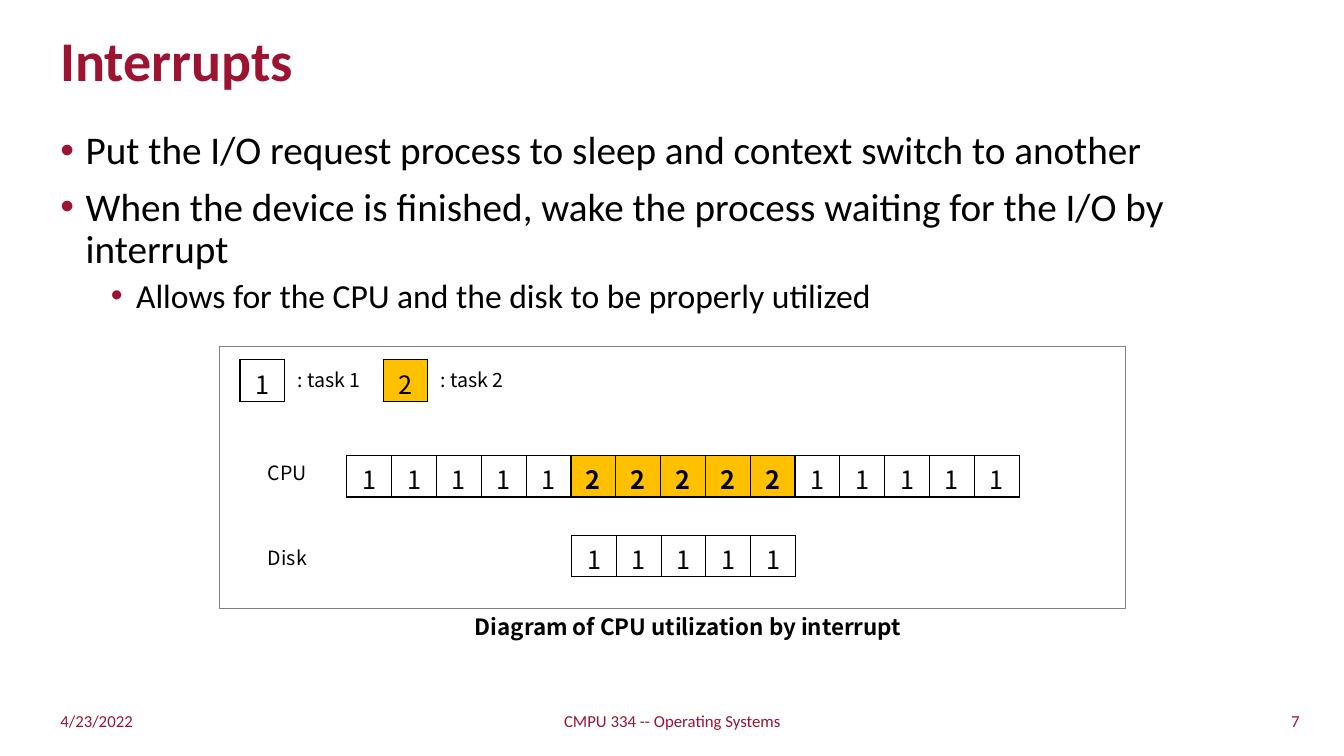
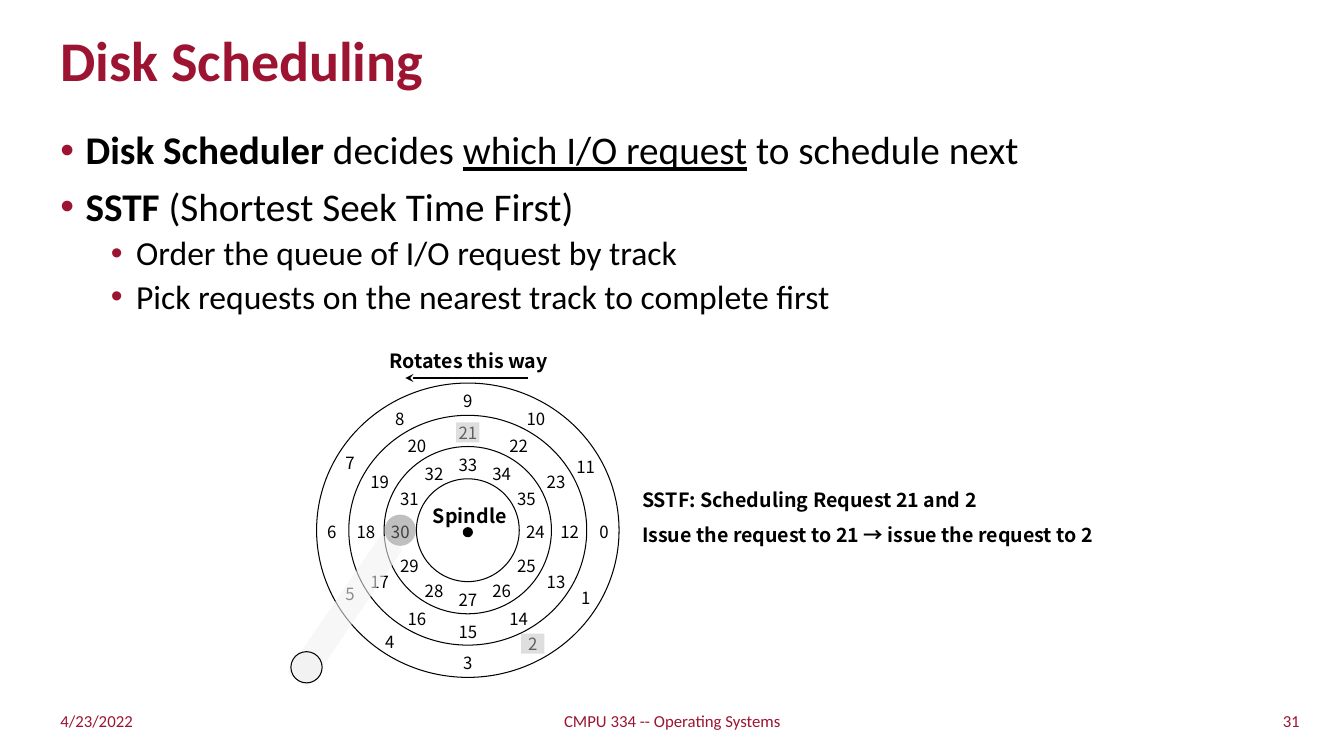
from dataclasses import dataclass
from math import cos, radians, sin

from lxml import etree
from pptx import Presentation
from pptx.dml.color import RGBColor
from pptx.enum.shapes import MSO_CONNECTOR, MSO_SHAPE
from pptx.enum.text import MSO_ANCHOR, MSO_AUTO_SIZE, PP_ALIGN
from pptx.oxml.ns import qn
from pptx.util import Inches, Pt

LEFT, CENTER, RIGHT = PP_ALIGN.LEFT, PP_ALIGN.CENTER, PP_ALIGN.RIGHT
TOP, MIDDLE = MSO_ANCHOR.TOP, MSO_ANCHOR.MIDDLE
NO_AUTOFIT = MSO_AUTO_SIZE.NONE
OVAL, RECT, ROUNDED = MSO_SHAPE.OVAL, MSO_SHAPE.RECTANGLE, MSO_SHAPE.ROUNDED_RECTANGLE
STRAIGHT = MSO_CONNECTOR.STRAIGHT


@dataclass(frozen=True)
class Theme:
    accent: str = "9C1431"
    ink: str = "000000"
    task_two: str = "FFC000"
    frame: str = "808080"
    arm: str = "F2F2F2"
    highlight: str = "BFBFBF"
    font: str = "Calibri"
    diagram_font: str = "Noto Sans CJK KR"
    title: int = 40
    body: tuple = (28, 24)
    cell: int = 18
    caption: int = 16
    label: int = 14
    small: int = 12


THEME = Theme()
DATE = "4/23/2022"
COURSE = "CMPU 334 -- Operating Systems"
BOLD = {"bold": True}
UNDERLINED = {"underline": True}

# Horizontal and vertical radii, from the spindle outwards
TRACK_EDGES = [(0.51, 0.51), (0.83, 0.83), (1.18, 1.14), (1.5, 1.46)]
# First sector and the radii on which a track's numbers sit
TRACKS = [(0, 1.35, 1.3), (12, 1.01, 0.99), (24, 0.67, 0.67)]
SECTORS_PER_TRACK = 12
SECTOR_NUDGES = {2: (-0.03, -0.02), 4: (-0.1, -0.04), 5: (0, -0.04), 7: (0, -0.04)}
REQUESTED = (21, 2)


def inches(box):
    return [Inches(length) for length in box]


def around(x, y, width, height):
    """Box of the given size centred on a point."""
    return x - width / 2, y - height / 2, width, height


def style_font(font, size, color=THEME.ink, name=THEME.diagram_font, bold=False):
    font.size, font.name, font.bold = Pt(size), name, bold
    font.color.rgb = RGBColor.from_string(color)


def add_label(slide, box, lines, size=THEME.label, color=THEME.ink,
              name=THEME.diagram_font, bold=False, align=LEFT, anchor=TOP,
              side_inset=0.1, spacing=1.0):
    frame = slide.shapes.add_textbox(*inches(box)).text_frame
    frame.word_wrap = True
    frame.vertical_anchor = anchor
    frame.margin_left = frame.margin_right = Inches(side_inset)
    frame.text = lines
    for paragraph in frame.paragraphs:
        paragraph.alignment, paragraph.line_spacing = align, spacing
        style_font(paragraph.font, size, color, name, bold)


def add_figure(slide, kind, box, fill=None, line=None, opacity=None):
    figure = slide.shapes.add_shape(kind, *inches(box))
    figure.shadow.inherit = False
    if fill:
        figure.fill.solid()
        figure.fill.fore_color.rgb = RGBColor.from_string(fill)
    else:
        figure.fill.background()
    if opacity:
        color = figure.element.spPr.find(qn("a:solidFill")).find(qn("a:srgbClr"))
        etree.SubElement(color, qn("a:alpha"), val=str(opacity * 1000))
    if line:
        figure.line.color.rgb = RGBColor.from_string(line)
        figure.line.width = Pt(0.75)
    else:
        figure.line.fill.background()
    return figure


def add_arrow(slide, x1, y1, x2, y2):
    arrow = slide.shapes.add_connector(STRAIGHT, *inches((x1, y1, x2, y2)))
    arrow.line.color.rgb = RGBColor.from_string(THEME.ink)
    arrow.line.width = Pt(1.5)
    etree.SubElement(arrow.line._get_or_add_ln(), qn("a:tailEnd"), type="stealth")
    etree.SubElement(arrow.element.spPr, qn("a:effectLst"))


def add_borders(cell):
    properties = cell._tc.get_or_add_tcPr()
    for position, side in enumerate(("a:lnL", "a:lnR", "a:lnT", "a:lnB")):
        border = etree.Element(qn(side), w=str(Pt(1)))
        fill = etree.SubElement(border, qn("a:solidFill"))
        etree.SubElement(fill, qn("a:srgbClr"), val=THEME.ink)
        properties.insert(position, border)


def add_timeline(slide, box, tasks, bottom_inset=0.0, emphasis=False):
    """One table row with a cell for each time slot."""
    table = slide.shapes.add_table(1, len(tasks), *inches(box)).table
    table.first_row = table.horz_banding = False
    for column, task, cell in zip(table.columns, tasks, table.iter_cells()):
        column.width = Inches(box[2] / len(tasks))
        is_second = task == "2"
        if is_second:
            cell.fill.solid()
            cell.fill.fore_color.rgb = RGBColor.from_string(THEME.task_two)
        else:
            cell.fill.background()
        add_borders(cell)
        cell.margin_bottom = Inches(bottom_inset)
        cell.text = task
        paragraph = cell.text_frame.paragraphs[0]
        paragraph.alignment = CENTER
        style_font(paragraph.font, THEME.cell, bold=emphasis and is_second)


def add_bullet(paragraph, level):
    properties = paragraph._p.get_or_add_pPr()
    properties.set("marL", str(Inches(0.25 + 0.5 * level)))
    properties.set("indent", str(Inches(-0.25)))
    color = etree.SubElement(properties, qn("a:buClr"))
    etree.SubElement(color, qn("a:srgbClr"), val=THEME.accent)
    etree.SubElement(properties, qn("a:buFont"), typeface="Arial")
    etree.SubElement(properties, qn("a:buChar"), char="•")


def fill_title(placeholder, title):
    frame = placeholder.text_frame
    frame.text = title
    frame.auto_size, frame.vertical_anchor = NO_AUTOFIT, MIDDLE
    paragraph = frame.paragraphs[0]
    paragraph.alignment, paragraph.line_spacing = LEFT, 0.9
    style_font(paragraph.font, THEME.title, THEME.accent, THEME.font, True)


def fill_body(placeholder, points):
    """Each point is its level and a list of (text, font settings) runs."""
    frame = placeholder.text_frame
    frame.auto_size = NO_AUTOFIT
    for number, (level, runs) in enumerate(points):
        paragraph = frame.add_paragraph() if number else frame.paragraphs[0]
        paragraph.level = level
        paragraph.line_spacing = 0.9
        paragraph.space_before = Pt((10, 5)[level] if number else 0)
        add_bullet(paragraph, level)
        style_font(paragraph.font, THEME.body[level], name=THEME.font)
        for text, settings in runs:
            run = paragraph.add_run()
            run.text = text
            for setting, value in settings.items():
                setattr(run.font, setting, value)


def add_footer(slide, number):
    for left, width, text, align in ((0.5, 3.76, DATE, LEFT),
                                     (4.42, 4.5, COURSE, CENTER),
                                     (9.23, 3.76, str(number), RIGHT)):
        add_label(slide, (left, 6.95, width, 0.4), text, THEME.small,
                  THEME.accent, THEME.font, align=align, anchor=MIDDLE)


def place_layout_parts(layout):
    """Move the title and body placeholders that every slide inherits."""
    boxes = {0: (0.5, 0.25, 11.45, 0.75), 1: (0.5, 1.25, 12.33, 5.45)}
    for placeholder in layout.placeholders:
        box = boxes.get(placeholder.placeholder_format.idx)
        if box:
            (placeholder.left, placeholder.top,
             placeholder.width, placeholder.height) = inches(box)


def add_content_slide(deck, number, title, points):
    slide = deck.slides.add_slide(deck.slide_layouts[1])
    fill_title(slide.shapes.title, title)
    fill_body(slide.placeholders[1], points)
    add_footer(slide, number)
    return slide


def add_utilization_diagram(slide, box):
    left, top, width, height = box
    add_figure(slide, RECT, box, line=THEME.frame)
    for task, offset in (("1", 0.2), ("2", 1.62)):
        add_timeline(slide, (left + offset, top + 0.13, 0.44, 0.41), task)
        add_label(slide, (left + offset + 0.47, top + 0.16, 1, 0.34), f": task {task}")
    add_label(slide, (left + 0.38, top + 1.08, 0.8, 0.34), "CPU")
    add_label(slide, (left + 0.38, top + 1.93, 0.8, 0.34), "Disk")
    add_timeline(slide, (left + 1.26, top + 1.08, 6.67, 0.41),
                 "111112222211111", bottom_inset=0.05, emphasis=True)
    add_timeline(slide, (left + 3.49, top + 1.87, 2.22, 0.41), "11111")
    add_label(slide, (left + 1.97, top + height - 0.01, 5.35, 0.37),
              "Diagram of CPU utilization by interrupt",
              THEME.caption, bold=True, align=CENTER)


def sector_centers(x, y):
    """Map each sector number to its point, clockwise from the right."""
    centers = {}
    for first, radius_x, radius_y in TRACKS:
        for step in range(SECTORS_PER_TRACK):
            angle = radians(360 / SECTORS_PER_TRACK * step)
            shift_x, shift_y = SECTOR_NUDGES.get(first + step, (0, 0))
            centers[first + step] = (x + radius_x * cos(angle) + shift_x,
                                     y + radius_y * sin(angle) + shift_y)
    return centers


def add_disk(slide, x, y):
    """Draw the disk, its sectors and its arm around the spindle point."""
    for radius_x, radius_y in TRACK_EDGES:
        add_figure(slide, OVAL, around(x, y, 2 * radius_x, 2 * radius_y), line=THEME.ink)
    sectors = sector_centers(x, y + 0.02)
    for sector, center in sectors.items():
        add_label(slide, around(*center, 0.39, 0.3), str(sector), THEME.small,
                  align=CENTER, side_inset=0)

    add_figure(slide, OVAL, around(x, y + 0.02, 0.09, 0.09), THEME.ink, THEME.ink)
    add_label(slide, around(x + 0.02, y - 0.14, 0.97, 0.34), "Spindle",
              bold=True, align=CENTER)
    add_label(slide, around(x + 0.01, y - 1.68, 1.97, 0.34), "Rotates this way",
              bold=True, align=CENTER)
    add_arrow(slide, x + 0.6, y - 1.51, x - 0.62, y - 1.51)

    arm = add_figure(slide, ROUNDED, around(x - 1.22, y + 0.8, 0.26, 1.67),
                     THEME.arm, opacity=58)
    arm.rotation = 34.4
    add_figure(slide, OVAL, around(x - 0.67, y, 0.31, 0.31), THEME.frame, opacity=50)
    add_figure(slide, OVAL, around(x - 1.6, y + 1.36, 0.31, 0.31), THEME.arm, THEME.ink)
    for sector in REQUESTED:
        add_figure(slide, RECT, around(*sectors[sector], 0.23, 0.2),
                   THEME.highlight, opacity=50)


def build_interrupts(deck):
    slide = add_content_slide(deck, 7, "Interrupts", [
        (0, [("Put the I/O request process to sleep and context switch to another", {})]),
        (0, [("When the device is finished, wake the process waiting for the I/O "
              "by interrupt", {})]),
        (1, [("Allows for the CPU and the disk to be properly utilized", {})]),
    ])
    add_utilization_diagram(slide, (2.18, 3.44, 8.98, 2.6))


def build_disk_scheduling(deck):
    slide = add_content_slide(deck, 31, "Disk Scheduling", [
        (0, [("Disk Scheduler", BOLD), (" decides ", {}),
             ("which I/O request", UNDERLINED), (" to schedule next", {})]),
        (0, [("SSTF", BOLD), (" (Shortest Seek Time First)", {})]),
        (1, [("Order the queue of I/O request by track", {})]),
        (1, [("Pick requests on the nearest track to complete first", {})]),
    ])
    add_disk(slide, 4.64, 5.26)
    add_label(slide, (6.27, 4.67, 4.96, 0.81),
              "SSTF: Scheduling Request 21 and 2\n"
              "Issue the request to 21 → issue the request to 2",
              bold=True, spacing=1.5)


def main():
    deck = Presentation()
    deck.slide_width, deck.slide_height = Inches(13.33), Inches(7.5)
    place_layout_parts(deck.slide_layouts[1])
    build_interrupts(deck)
    build_disk_scheduling(deck)
    deck.save("out.pptx")


if __name__ == "__main__":
    main()
